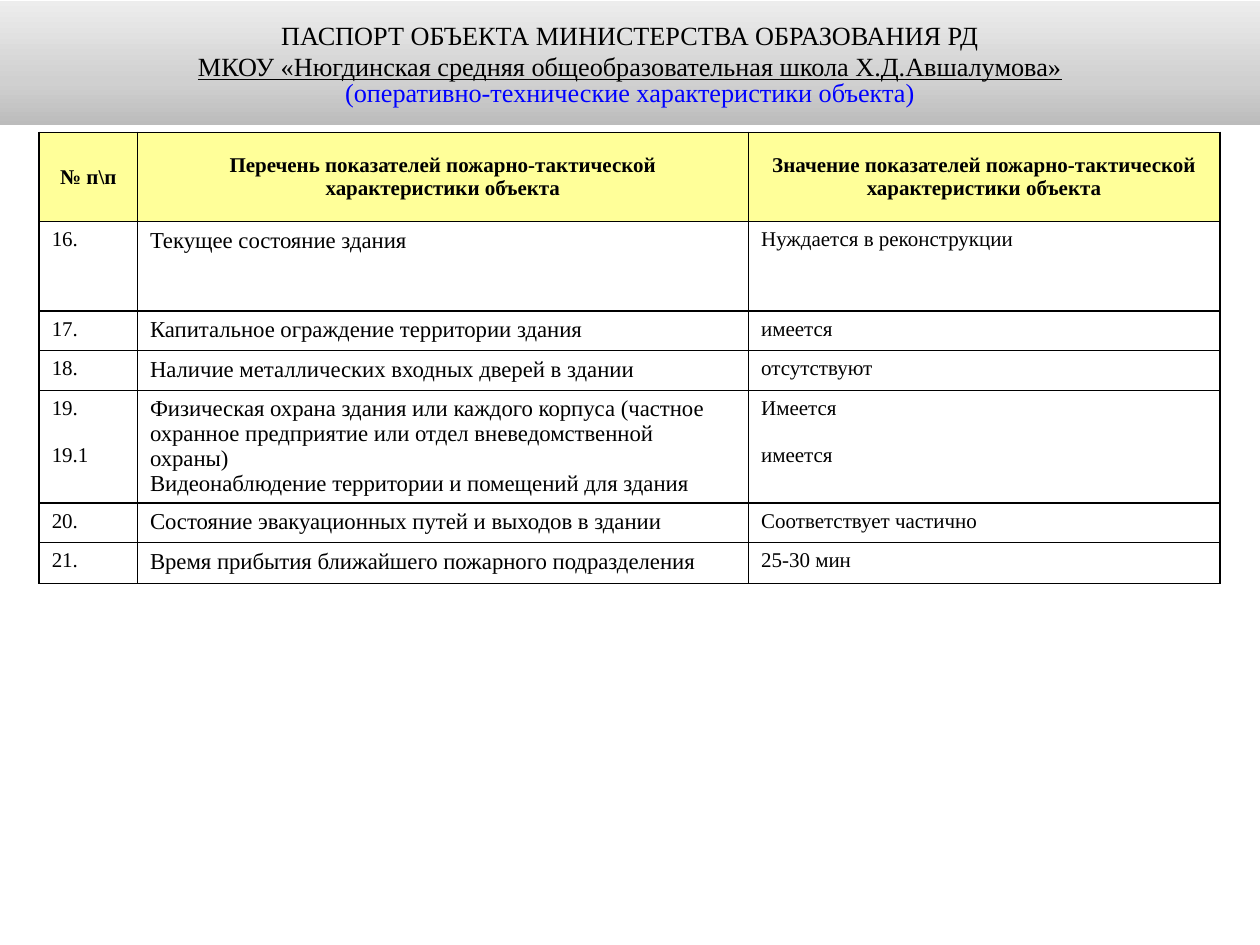
from copy import deepcopy

from lxml import etree
from pptx import Presentation
from pptx.dml.color import RGBColor
from pptx.enum.text import MSO_ANCHOR, MSO_AUTO_SIZE, PP_ALIGN
from pptx.oxml.ns import qn
from pptx.util import Cm, Pt

CENTER, LEFT = PP_ALIGN.CENTER, PP_ALIGN.LEFT
MIDDLE, TOP = MSO_ANCHOR.MIDDLE, MSO_ANCHOR.TOP
NO_AUTOFIT = MSO_AUTO_SIZE.NONE
TITLE_ONLY = 5

TITLE_LINES = [
    "ПАСПОРТ ОБЪЕКТА МИНИСТЕРСТВА ОБРАЗОВАНИЯ РД",
    "МКОУ «Нюгдинская средняя общеобразовательная школа Х.Д.Авшалумова»",
    "(оперативно-технические характеристики объекта)",
]
BANNER_STOPS = [(0, "BCBCBC"), (0.35, "D0D0D0"), (1, "EDEDED")]

HEADER = [
    "№ п\\п",
    "Перечень показателей пожарно-тактической характеристики объекта",
    "Значение показателей пожарно-тактической характеристики объекта",
]
INDICATORS = [
    ("16.", "Текущее состояние здания", "Нуждается в реконструкции"),
    ("17.", "Капитальное ограждение территории здания", "имеется"),
    ("18.", "Наличие металлических входных дверей в здании", "отсутствуют"),
    ("19.\n19.1",
     "Физическая охрана здания или каждого корпуса (частное охранное "
     "предприятие или отдел вневедомственной охраны)\n"
     "Видеонаблюдение территории и помещений для здания",
     "Имеется\nимеется"),
    ("20.", "Состояние эвакуационных путей и выходов в здании",
     "Соответствует частично"),
    ("21.", "Время прибытия ближайшего пожарного подразделения", "25-30 мин"),
]
COLUMN_WIDTHS = [1.98, 12.32, 9.5]
ROW_HEIGHTS = [1.8, 1.8, 0.8, 0.8, 2.27, 0.8, 0.82]
INDICATOR_SIZES = [12, 13, 12]
ENTRY_GAPS = [13.5, 0, 13.5]


def color(hex_value):
    return RGBColor.from_string(hex_value)


class PassportSlide:
    font_name = "Times New Roman"
    ink = "000000"

    def __init__(self, presentation):
        layout = presentation.slide_layouts[TITLE_ONLY]
        self.slide = presentation.slides.add_slide(layout)

    def style(self, paragraph, size, align, bold=False, ink=ink):
        paragraph.alignment = align
        for run in paragraph.runs:
            run.font.name = self.font_name
            run.font.size = Pt(size)
            run.font.bold = bold
            run.font.color.rgb = color(ink)

    def title(self, lines, stops):
        banner = self.slide.shapes.title
        banner.left, banner.top = Cm(0), Cm(0.02)
        banner.width, banner.height = Cm(25.4), Cm(2.5)
        self.gradient(banner, stops)

        frame = banner.text_frame
        frame.text = "\n".join(lines)
        frame.auto_size = NO_AUTOFIT
        frame.vertical_anchor = MIDDLE
        organisation, school, subtitle = frame.paragraphs
        self.style(organisation, 15, CENTER)
        self.style(school, 15, CENTER)
        self.style(subtitle, 15, CENTER, ink="0000FF")
        school.runs[0].font.underline = True
        subtitle.line_spacing = 0.8

    def gradient(self, shape, stops):
        """Fill the shape from bottom to top with the given stops."""
        shape.fill.gradient()
        shape.fill.gradient_angle = 90
        stop_list = shape.fill.gradient_stops
        gs_list = shape.element.spPr.find(".//" + qn("a:gsLst"))
        for _ in range(len(stops) - len(stop_list)):
            gs_list.append(deepcopy(gs_list[0]))
        for stop, (position, hex_value) in zip(shape.fill.gradient_stops, stops):
            stop.position = position
            stop.color.rgb = color(hex_value)

    def table(self, header, indicators):
        table = self.slide.shapes.add_table(
            len(ROW_HEIGHTS), len(COLUMN_WIDTHS), Cm(0.79), Cm(2.67),
            Cm(sum(COLUMN_WIDTHS)), Cm(sum(ROW_HEIGHTS))).table
        table.first_row = table.horz_banding = False
        for column, width in zip(table.columns, COLUMN_WIDTHS):
            column.width = Cm(width)
        for row, height in zip(table.rows, ROW_HEIGHTS):
            row.height = Cm(height)

        for index, heading in enumerate(header):
            self.cell(table.cell(0, index), heading, 12, "FFFF99",
                      CENTER, MIDDLE, bold=True)
        for row_index, entries in enumerate(indicators, 1):
            for index, entry in enumerate(entries):
                self.cell(table.cell(row_index, index), entry,
                          INDICATOR_SIZES[index], gap=ENTRY_GAPS[index])

    def cell(self, cell, text, size, fill="FFFFFF", align=LEFT, anchor=TOP,
             bold=False, gap=0):
        cell.text_frame.text = text
        cell.vertical_anchor = anchor
        self.borders(cell)
        cell.fill.solid()
        cell.fill.fore_color.rgb = color(fill)
        for index, paragraph in enumerate(cell.text_frame.paragraphs):
            self.style(paragraph, size, align, bold)
            if index and gap:
                paragraph.space_before = Pt(gap)

    def borders(self, cell):
        properties = cell._tc.get_or_add_tcPr()
        for side in ("a:lnL", "a:lnR", "a:lnT", "a:lnB"):
            line = etree.SubElement(properties, qn(side), w=str(Pt(1)))
            solid = etree.SubElement(line, qn("a:solidFill"))
            etree.SubElement(solid, qn("a:srgbClr"), val=self.ink)


def main():
    presentation = Presentation()
    presentation.slide_width, presentation.slide_height = Cm(25.4), Cm(19.05)
    passport = PassportSlide(presentation)
    passport.title(TITLE_LINES, BANNER_STOPS)
    passport.table(HEADER, INDICATORS)
    presentation.save("out.pptx")


if __name__ == "__main__":
    main()
